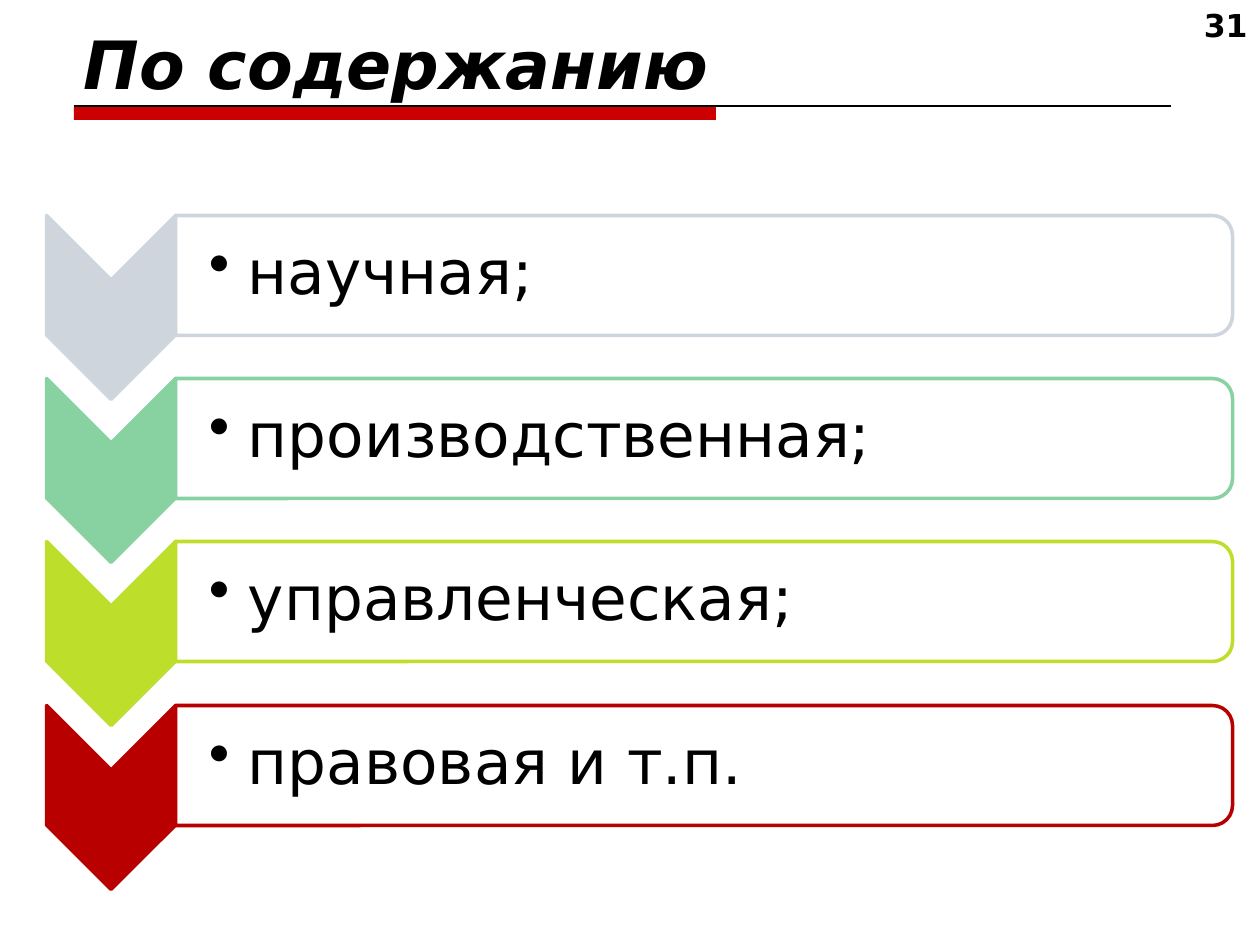
import pptx
import pptx.util
import pptx.dml.color
import pptx.enum.shapes
import pptx.enum.text
import pptx.oxml.ns
from lxml import etree

PX = 914400 / 126
FONT = "DejaVu Sans"
TITLE = "По содержанию"
NUMBER = "31"
ITEMS = [
    ("научная;", "CED5DD"),
    ("производственная;", "88D2A2"),
    ("управленческая;", "BEDE2C"),
    ("правовая и т.п.", "B90000"),
]
TITLE_BOX = (71, 26, 1103, 83)
NUMBER_BOX = (987, 0, 273, 66)
BAR = (74, 106, 642, 14)
RULE_END = 1171
CHEVRON = (19, 243, 184, 129)
PANEL = (644, -253, 120, 1057)
LABEL = (175, 221, 1051, 107)
LAST_OFFSET = 490

SHAPE = pptx.enum.shapes.MSO_SHAPE
ANCHOR = pptx.enum.text.MSO_ANCHOR
ALIGN = pptx.enum.text.PP_ALIGN


def px(n):
    return pptx.util.Emu(round(n * PX))


def rgb(value):
    return pptx.dml.color.RGBColor.from_string(value)


def sub(parent, tag, **attrs):
    return etree.SubElement(parent, pptx.oxml.ns.qn(tag), attrs)


def add_shape(s, kind, box, fill, line=None, rotation=0):
    sp = s.shapes.add_shape(kind, *map(px, box))
    sp.shadow.inherit = False
    sp.rotation = rotation
    sp.fill.solid()
    sp.fill.fore_color.rgb = rgb(fill)
    if line:
        sp.line.color.rgb = rgb(line)
        sp.line.width = pptx.util.Pt(2)
    else:
        sp.line.fill.background()
    return sp


def add_text(s, box, text, font, frame):
    sp = s.shapes.add_textbox(*map(px, box))
    tf = sp.text_frame
    for name, value in {"word_wrap": True, **frame}.items():
        setattr(tf, name, value)
    p = tf.paragraphs[0]
    r = p.add_run()
    r.text = text
    for name, value in {"name": FONT, **font}.items():
        setattr(r.font, name, value)
    r.font.color.rgb = rgb("000000")
    return p


def add_header(s):
    add_shape(s, SHAPE.RECTANGLE, BAR, "CC0000")
    left, top = BAR[:2]
    rule = s.shapes.add_connector(
        pptx.enum.shapes.MSO_CONNECTOR.STRAIGHT, px(left), px(top), px(RULE_END), px(top))
    rule.line.color.rgb = rgb("000000")
    rule.line.width = pptx.util.Pt(0.75)
    sub(rule.element.spPr, "a:effectLst")
    add_text(s, TITLE_BOX, TITLE,
             {"size": pptx.util.Pt(38), "bold": True, "italic": True},
             {"vertical_anchor": ANCHOR.BOTTOM})
    p = add_text(s, NUMBER_BOX, NUMBER, {"size": pptx.util.Pt(18), "bold": True}, {})
    p.alignment = ALIGN.RIGHT


def add_item(s, text, color, offset):
    def shifted(box):
        left, top, width, height = box
        return left, top + offset, width, height

    add_shape(s, SHAPE.CHEVRON, shifted(CHEVRON), color, color, 90)
    panel = add_shape(s, SHAPE.ROUND_2_SAME_RECTANGLE, shifted(PANEL), "FFFFFF", color, 90)
    fill = panel.element.spPr.find(pptx.oxml.ns.qn("a:solidFill"))
    sub(fill[0], "a:alpha", val="90000")
    p = add_text(s, shifted(LABEL), text, {"size": pptx.util.Pt(35)}, {
        "vertical_anchor": ANCHOR.MIDDLE, "margin_left": px(34),
        "margin_right": px(3), "margin_top": px(3), "margin_bottom": px(3)})
    p.line_spacing = 0.9
    pPr = p._p.get_or_add_pPr()
    pPr.set("marL", str(px(39)))
    pPr.set("indent", str(px(-39)))
    sub(pPr, "a:buChar", char="•")


def main():
    prs = pptx.Presentation()
    prs.slide_width, prs.slide_height = px(1260), px(945)
    s = prs.slides.add_slide(prs.slide_layouts[6])
    add_header(s)
    for i, (text, color) in enumerate(ITEMS):
        add_item(s, text, color, LAST_OFFSET * i // (len(ITEMS) - 1))
    prs.save("out.pptx")


if __name__ == "__main__":
    main()
